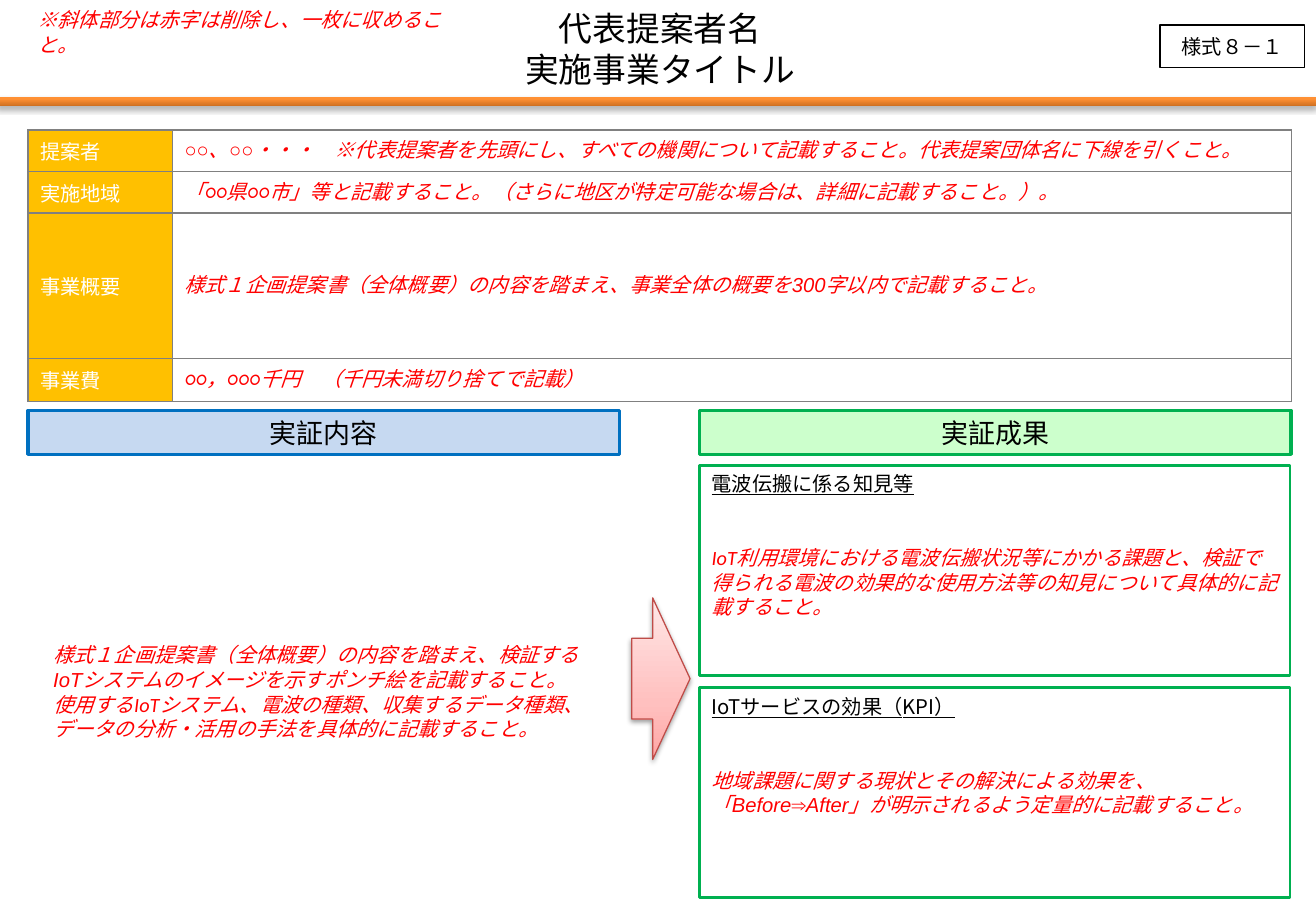
from lxml.etree import SubElement as Sub
from pptx import Presentation
from pptx.dml.color import RGBColor as Rgb
from pptx.enum.shapes import MSO_SHAPE as Kind
from pptx.enum.text import MSO_ANCHOR as Anchor, MSO_AUTO_SIZE as Auto, PP_ALIGN as Align
from pptx.oxml.ns import qn
from pptx.util import Pt

THEME = {
    "noto": "Noto Sans CJK JP", "arial": "Arial", "cal": "Calibri",
    "black": "000000", "white": "FFFFFF", "red": "FF0000",
    "gold": "FFC000", "grey": "808080", "green": "00B050", "mint": "CCFFCC",
    "blue": "0070C0", "sky": "C6D9F1", "rose": "BF4C48",
    "bar": [(0, "CC6E20"), (80, "FF9034"), (100, "FF9136")],
    "pink": [(0, "FFA6A5"), (35, "FFC0BF"), (100, "FFE7E7")],
    "body": 12, "head": 16, "title": 20, "pitch": 1.22,
}
BODY, HEAD, PITCH = THEME["body"], THEME["head"], THEME["pitch"]

TITLE = ["代表提案者名", "実施事業タイトル"]
FORM = "様式８－１"
NOTE = "※斜体部分は赤字は削除し、一枚に収めること。"
ROWS = [
    (24.6, "提案者", [("arial", "○○、○○・・・　※代表提案者を先頭にし、すべての機関について記載すること。代表提案団体名に下線を引くこと。")]),
    (24.6, "実施地域", [
        ("cal", "「○○県○○市」等と記載"), ("arial", "すること。"),
        ("cal", "（さらに地区が特定可能な場合は、詳細に記載"), ("arial", "すること。"),
        ("cal", "）。")]),
    (86.4, "事業概要", [("arial", "様式１企画提案書（全体概要）の内容を踏まえ、事業全体の概要を300字以内で記載すること。")]),
    (25.2, "事業費", [("cal", "○○，○○○千円　（千円未満切り捨てで記載）")]),
]
PLAN = [
    ("arial", "様式１企画提案書（全体概要）の内容を踏まえ、検証するIoTシステムのイメージを示すポンチ絵を記載すること。"),
    ("cal", "使用するIoTシステム、電波の種類、収集するデータ種類、データの分析・活用の手法を具体的に記載すること。"),
]
HEADS = [("実証内容", "sky", "blue"), ("実証成果", "mint", "green")]
GAINS = [
    ("電波伝搬に係る知見等", "cal", "IoT利用環境における電波伝搬状況等にかかる課題と、検証で得られる電波の効果的な使用方法等の知見について具体的に記載すること。"),
    ("IoTサービスの効果（KPI）", "arial", "地域課題に関する現状とその解決による効果を、「Before⇒After」が明示されるよう定量的に記載すること。"),
]

LEFT, RIGHT, WIDE = 16.6, 414.7, 350.5
COLS = [85.6, 663.2]

prs = Presentation()
prs.slide_width, prs.slide_height = Pt(780), Pt(540)
slide = prs.slides.add_slide(prs.slide_layouts[6])


def tint(name):
    return Rgb.from_string(THEME[name])


def write(par, runs, ink, size=BODY, align=None, slant=False, under=False):
    par.alignment = align
    for face, text in runs:
        run = par.add_run()
        run.text = text
        font = run.font
        font.name, font.size = THEME[face], Pt(size)
        font.italic, font.underline = slant, under
        font.color.rgb = tint(ink)
        Sub(run._r.get_or_add_rPr(), qn("a:ea"), typeface=THEME[face])


def fill_text(frame, pars, gap=0):
    frame.word_wrap = True
    for i, style in enumerate(pars):
        par = frame.add_paragraph() if i else frame.paragraphs[0]
        write(par, **style)
        par.line_spacing = Pt(round(style.get("size", BODY) * PITCH, 1))
        if i and gap:
            par.space_before = Pt(gap)


def label(box, pars, gap=0):
    shape = slide.shapes.add_textbox(*map(Pt, box))
    fill_text(shape.text_frame, pars, gap)
    shape.text_frame.auto_size = Auto.SHAPE_TO_FIT_TEXT


def block(box, fill, line=None, width=1, pars=(), gap=0, anchor=Anchor.MIDDLE, kind=Kind.RECTANGLE):
    shape = slide.shapes.add_shape(kind, *map(Pt, box))
    shape.shadow.inherit = False
    if isinstance(THEME[fill], list):
        shape.fill.gradient()
        shape.fill.gradient_angle = 90
        stops = shape._element.spPr.find(qn("a:gradFill")).find(qn("a:gsLst"))
        for stop in list(stops):
            stops.remove(stop)
        for pos, hue in THEME[fill]:
            stop = Sub(stops, qn("a:gs"), pos=str(pos * 1000))
            Sub(stop, qn("a:srgbClr"), val=hue)
    else:
        shape.fill.solid()
        shape.fill.fore_color.rgb = tint(fill)
    if line:
        shape.line.color.rgb = tint(line)
        shape.line.width = Pt(width)
    else:
        shape.line.fill.background()
    shape.text_frame.vertical_anchor = anchor
    fill_text(shape.text_frame, pars, gap)
    return shape


def shade(shape, alpha, blur, dist):
    glow = Sub(shape._element.spPr.find(qn("a:effectLst")), qn("a:outerShdw"),
               blurRad=str(Pt(blur)), dist=str(Pt(dist)), dir="5400000", rotWithShape="0")
    hue = Sub(glow, qn("a:srgbClr"), val=THEME["black"])
    Sub(hue, qn("a:alpha"), val=str(alpha * 1000))


def frame_cell(cell, fill):
    props = cell._tc.get_or_add_tcPr()
    for side in ("lnL", "lnR", "lnT", "lnB"):
        edge = Sub(props, qn("a:" + side), w=str(Pt(1)))
        Sub(Sub(edge, qn("a:solidFill")), qn("a:srgbClr"), val=THEME["grey"])
    cell.fill.solid()
    cell.fill.fore_color.rgb = tint(fill)
    cell.vertical_anchor = Anchor.MIDDLE


shade(block((-2, 57.6, 782, 5.4), "bar"), 35, 3.1, 1.8)

grid = slide.shapes.add_table(len(ROWS), len(COLS), Pt(LEFT), Pt(77), Pt(sum(COLS)),
                              Pt(sum(row[0] for row in ROWS))).table
grid.first_row = grid.horz_banding = False
for col, width in zip(grid.columns, COLS):
    col.width = Pt(width)
for i, (high, name, runs) in enumerate(ROWS):
    grid.rows[i].height = Pt(high)
    key, info = grid.cell(i, 0), grid.cell(i, 1)
    frame_cell(key, "gold")
    write(key.text_frame.paragraphs[0], [("noto", name)], "white", align=Align.JUSTIFY)
    frame_cell(info, "white")
    write(info.text_frame.paragraphs[0], runs, "red", slant=True)

label((2.9, 0.7, 776.9, 56.2), [
    dict(runs=[("noto", text)], ink="black", size=THEME["title"], align=Align.CENTER) for text in TITLE])
block((687.6, 14.8, 85.7, 25.2), "white", "black", 0.75,
      [dict(runs=[("cal", FORM)], ink="black", align=Align.CENTER)])
label((15.1, 0.7, 262.1, 21.8), [dict(runs=[("cal", NOTE)], ink="red", slant=True)])

arrow = block((374.4, 354.4, 34.6, 95.8), "pink", "rose", 0.75, kind=Kind.RIGHT_ARROW)
arrow.adjustments[0], arrow.adjustments[1] = 0.5, 0.64
shade(arrow, 38, 3.1, 1.6)

for i, (name, face, text) in enumerate(GAINS):
    block((RIGHT, 275.8 + 131.8 * i, 350, 124.6), "white", "green", 1.5, [
        dict(runs=[("noto", name)], ink="black", under=True),
        dict(runs=[(face, text)], ink="red", slant=True),
    ], gap=29.2, anchor=Anchor.TOP)

label((24.5, 377.3, 326.2, 65.5), [dict(runs=[run], ink="red", slant=True) for run in PLAN])

for left, (name, fill, line) in zip((LEFT, RIGHT), HEADS):
    block((left, 243.4, WIDE, 25.9), fill, line, 2,
          [dict(runs=[("noto", name)], ink="black", size=HEAD, align=Align.CENTER)])

prs.save("out.pptx")
